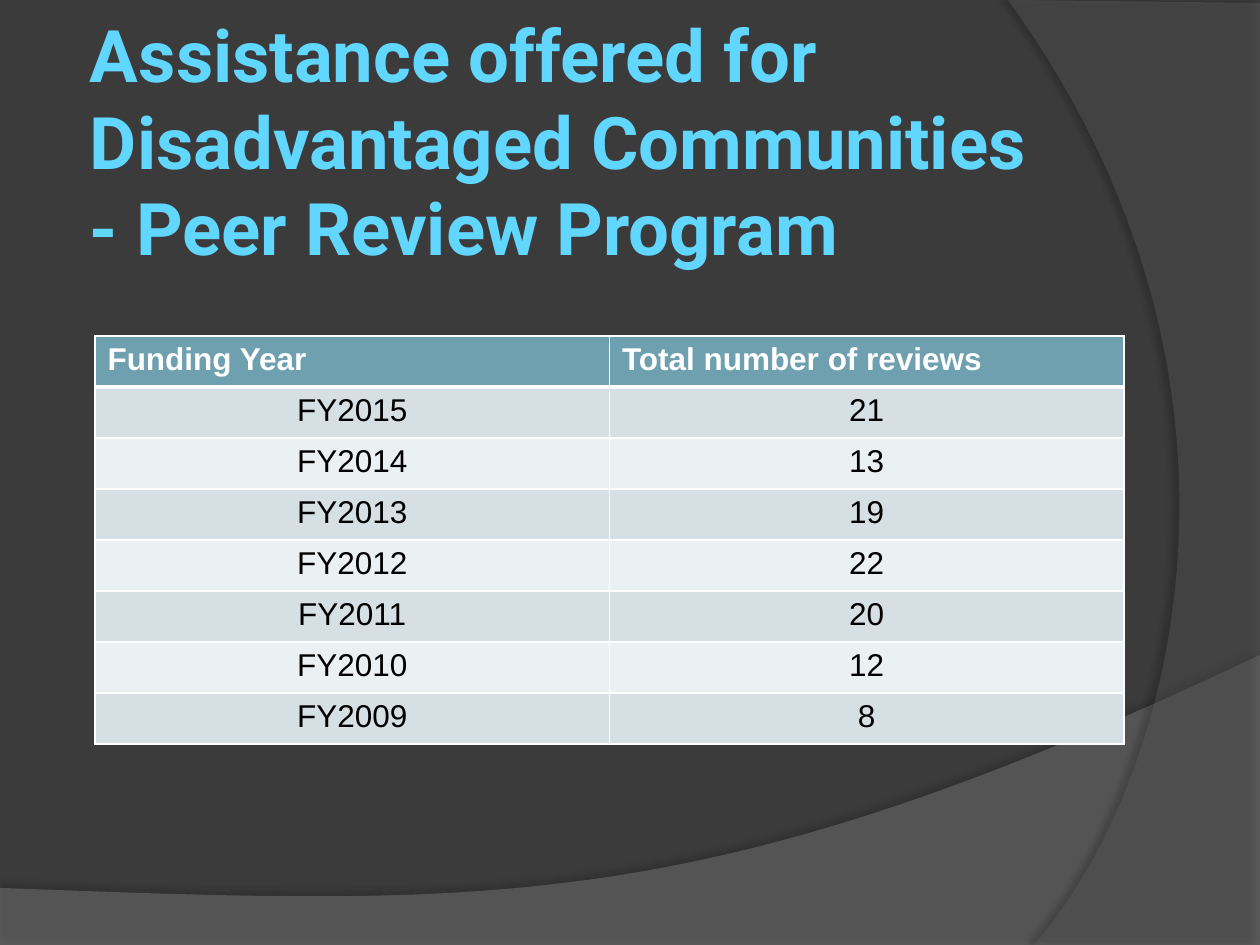
import dataclasses

import pptx
import pptx.dml.color
import pptx.enum.text
import pptx.oxml
import pptx.oxml.ns
import pptx.util

SCALE = 914400 / 126
ALIGN = pptx.enum.text.PP_ALIGN
ANCHOR = pptx.enum.text.MSO_ANCHOR
Point = tuple[int, int]


@dataclasses.dataclass(frozen=True)
class Theme:
    back: str = "3B3B3B"
    low: str = "7F7F7F"
    side: str = "5E5E5E"
    title: str = "61D6FF"
    head: str = "6EA0B0"
    odd: str = "D5DFE4"
    even: str = "EBF0F2"
    white: str = "FFFFFF"
    black: str = "000000"
    title_font: str = "Roboto"
    body_font: str = "Arial"
    title_size: float = 41.4
    body_size: int = 18


@dataclasses.dataclass(frozen=True)
class Wave:
    edge: list[Point]
    curve: list[Point]
    color: str
    alpha: int
    shade: int
    dist: float
    angle: int


@dataclasses.dataclass(frozen=True)
class Review:
    year: str
    total: str


THEME = Theme()
WAVES = [
    Wave([(0, 888), (0, 946), (1260, 946), (1260, 655)],
         [(704, 919), (493, 906), (0, 888)], THEME.low, 45, 35, 3.5, 270),
    Wave([(1260, 3), (1260, 945), (1034, 945)],
         [(1178, 780), (1283, 378), (1008, 0)], THEME.side, 40, 45, 4, 180),
]
HEAD = Review("Funding Year", "Total number of reviews")
REVIEWS = [
    Review("FY2015", "21"),
    Review("FY2014", "13"),
    Review("FY2013", "19"),
    Review("FY2012", "22"),
    Review("FY2011", "20"),
    Review("FY2010", "12"),
    Review("FY2009", "8"),
]


def emu(px: float) -> int:
    return round(px * SCALE)


def rgb(color: str) -> pptx.dml.color.RGBColor:
    return pptx.dml.color.RGBColor.from_string(color)


def paint(fill, color: str) -> None:
    fill.solid()
    fill.fore_color.rgb = rgb(color)


def node(body: str):
    space = pptx.oxml.ns.nsdecls("a")
    return pptx.oxml.parse_xml(body.replace(" ", f" {space} ", 1))


def write(frame, text: str, *, font: str, size: float, color: str,
          bold: bool = False, align=ALIGN.LEFT) -> None:
    para = frame.paragraphs[0]
    para.alignment = align
    for index, line in enumerate(text.splitlines()):
        if index:
            para.add_line_break()
        run = para.add_run()
        run.text = line
        run.font.name = font
        run.font.size = pptx.util.Pt(size)
        run.font.bold = bold
        run.font.color.rgb = rgb(color)


def bend(start: Point, curve: list[Point], steps: int = 60) -> list[tuple]:
    points = [start, *curve]
    result = []
    for step in range(1, steps + 1):
        t = step / steps
        rate = ((1 - t) ** 3, 3 * t * (1 - t) ** 2, 3 * t * t * (1 - t), t ** 3)
        result.append(tuple(sum(r * p[axis] for r, p in zip(rate, points))
                            for axis in (0, 1)))
    return result


def draw_wave(slide, wave: Wave) -> None:
    points = [(emu(x), emu(y))
              for x, y in wave.edge + bend(wave.edge[-1], wave.curve)]
    pen = slide.shapes.build_freeform(*points[0])
    pen.add_line_segments(points[1:], close=True)
    shape = pen.convert_to_shape()
    paint(shape.fill, wave.color)
    shape.line.fill.background()
    shape.shadow.inherit = False
    props = shape._element.spPr
    tint = props.find(".//" + pptx.oxml.ns.qn("a:srgbClr"))
    tint.append(node(f'<a:alpha val="{wave.alpha * 1000}"/>'))
    props.find(pptx.oxml.ns.qn("a:effectLst")).append(node(
        f'<a:outerShdw blurRad="{pptx.util.Pt(4)}" '
        f'dist="{pptx.util.Pt(wave.dist)}" dir="{wave.angle * 60000}" '
        f'algn="ctr" rotWithShape="0"><a:srgbClr val="{THEME.black}">'
        f'<a:alpha val="{wave.shade * 1000}"/></a:srgbClr></a:outerShdw>'))


def draw_title(slide, text: str) -> None:
    box = slide.shapes.add_textbox(emu(84), emu(105), emu(1029), emu(157))
    frame = box.text_frame
    frame.word_wrap = True
    frame.auto_size = pptx.enum.text.MSO_AUTO_SIZE.NONE
    frame.vertical_anchor = ANCHOR.MIDDLE
    frame.margin_left = frame.margin_right = frame.margin_top = emu(6)
    frame.margin_bottom = emu(93)
    write(frame, text, font=THEME.title_font, size=THEME.title_size,
          color=THEME.title, bold=True)


def frame_cell(cell, base: int) -> None:
    props = cell._tc.get_or_add_tcPr()
    widths = {"lnL": 1, "lnR": 1, "lnT": 1, "lnB": base}
    for index, (side, width) in enumerate(widths.items()):
        props.insert(index, node(
            f'<a:{side} w="{pptx.util.Pt(width)}"><a:solidFill>'
            f'<a:srgbClr val="{THEME.white}"/></a:solidFill></a:{side}>'))


def draw_table(slide, rows: list[Review]) -> None:
    high = 51
    table = slide.shapes.add_table(len(rows), 2, emu(95), emu(336),
                                   emu(1029), emu(high * len(rows))).table
    for index, review in enumerate(rows):
        table.rows[index].height = emu(high)
        top = index == 0
        color = THEME.head if top else THEME.odd if index % 2 else THEME.even
        for cell, text in zip(table.rows[index].cells,
                              (review.year, review.total)):
            paint(cell.fill, color)
            frame_cell(cell, 3 if top else 1)
            write(cell.text_frame, text, font=THEME.body_font,
                  size=THEME.body_size, bold=top,
                  color=THEME.white if top else THEME.black,
                  align=ALIGN.LEFT if top else ALIGN.CENTER)


def main() -> None:
    deck = pptx.Presentation()
    deck.slide_width, deck.slide_height = emu(1260), emu(945)
    slide = deck.slides.add_slide(deck.slide_layouts[6])
    paint(slide.background.fill, THEME.back)
    for wave in WAVES:
        draw_wave(slide, wave)
    draw_title(slide, "Assistance offered for Disadvantaged Communities\n"
                      "- Peer Review Program")
    draw_table(slide, [HEAD, *REVIEWS])
    deck.save("out.pptx")


if __name__ == "__main__":
    main()
